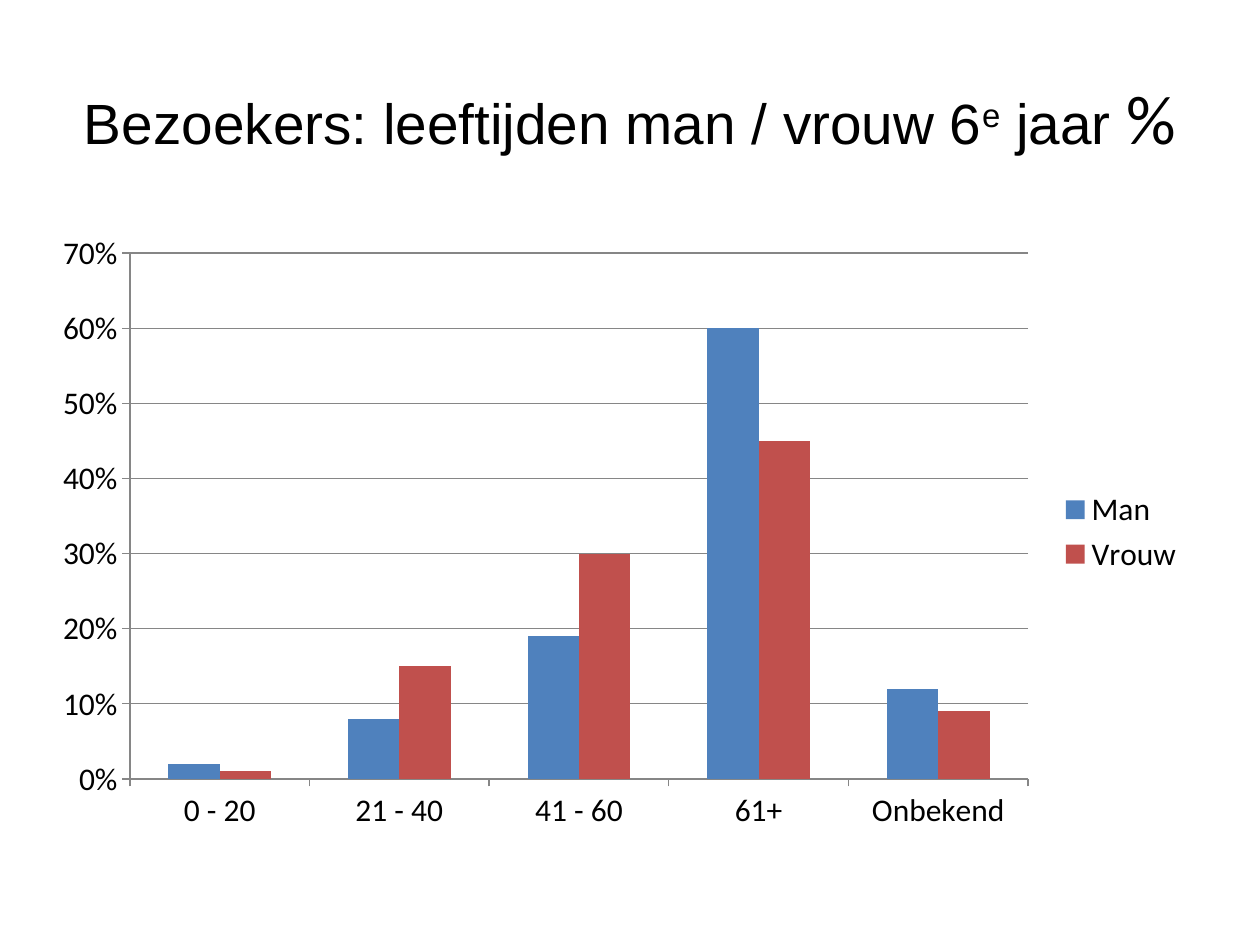
from lxml.etree import SubElement
from pptx import Presentation
from pptx.chart.data import CategoryChartData
from pptx.dml.color import RGBColor
from pptx.enum.chart import XL_CHART_TYPE as ChartType, XL_LEGEND_POSITION as LegendSide, XL_TICK_MARK as Tick
from pptx.enum.text import MSO_ANCHOR as Anchor, PP_ALIGN as Align
from pptx.oxml.ns import qn
from pptx.util import Pt

EMU_PER_PX = 914400 / 126


def px(length):
    return round(length * EMU_PER_PX)


def color(hex_code):
    return RGBColor.from_string(hex_code)


deck = Presentation()
deck.slide_width, deck.slide_height = px(1260), px(945)
slide = deck.slides.add_slide(deck.slide_layouts[5])

# Title with a superscript and a larger percent sign
heading = slide.shapes.title
for side, length in {"left": 63, "top": 38, "width": 1134, "height": 157}.items():
    setattr(heading, side, px(length))
heading.text_frame.vertical_anchor = Anchor.MIDDLE
heading.text_frame.word_wrap = True
heading_line = heading.text_frame.paragraphs[0]
heading_line.alignment = Align.CENTER
for words, size, face, baseline in [
    ("Bezoekers: leeftijden man / vrouw 6", 32.4, "Arial", 0),
    ("e", 32.4, "Arial", 30000),
    (" jaar ", 32.4, "Arial", 0),
    ("%", 39.6, "Calibri", 0),
]:
    part = heading_line.add_run()
    part.text = words
    part.font.size, part.font.name = Pt(size), face
    part.font.color.rgb = color("000000")
    if baseline:
        part.font._element.set("baseline", str(baseline))

# Visitors by age and sex
ages = CategoryChartData(number_format="0%")
ages.categories = ["0 - 20", "21 - 40", "41 - 60", "61+", "Onbekend"]
ages.add_series("Man", [0.02, 0.08, 0.19, 0.6, 0.12])
ages.add_series("Vrouw", [0.01, 0.15, 0.3, 0.45, 0.09])
visitors = slide.shapes.add_chart(
    ChartType.COLUMN_CLUSTERED, px(63), px(220), px(1134), px(624), ages
).chart
visitors.has_title = False
visitors.font.size, visitors.font.name = Pt(18), "Calibri"
visitors.font.color.rgb = color("000000")

# Columns
columns = visitors.plots[0]
columns.gap_width, columns.overlap = 150, 0
columns.vary_by_categories = False
for group, fill in zip(columns.series, ["4F81BD", "C0504D"]):
    group.format.fill.solid()
    group.format.fill.fore_color.rgb = color(fill)
    group.invert_if_negative = False

# Axes and gridlines
share_axis, age_axis = visitors.value_axis, visitors.category_axis
for name, value in {"minimum_scale": 0, "maximum_scale": 0.7, "major_unit": 0.1,
                    "has_major_gridlines": True}.items():
    setattr(share_axis, name, value)
share_axis.tick_labels.number_format = "0%"
share_axis.tick_labels.number_format_is_linked = False
for axis in (share_axis, age_axis):
    axis.major_tick_mark, axis.minor_tick_mark = Tick.OUTSIDE, Tick.NONE
for ruled in (share_axis, age_axis, share_axis.major_gridlines):
    ruled.format.line.color.rgb = color("868686")
    ruled.format.line.width = Pt(0.75)

# Legend
visitors.has_legend = True
visitors.legend.position = LegendSide.RIGHT
visitors.legend.include_in_layout = False

# Fixed inner plot area
plot_area = visitors._chartSpace.chart.plotArea
layout = plot_area.find(qn("c:layout"))
if layout is None:
    layout = SubElement(plot_area, qn("c:layout"))
    plot_area.insert(0, layout)
manual = SubElement(layout, qn("c:manualLayout"))
for tag, value in {"layoutTarget": "inner", "xMode": "edge", "yMode": "edge",
                   "x": 0.058, "y": 0.053, "w": 0.793, "h": 0.843}.items():
    SubElement(manual, qn(f"c:{tag}")).set("val", str(value))

deck.save("out.pptx")
